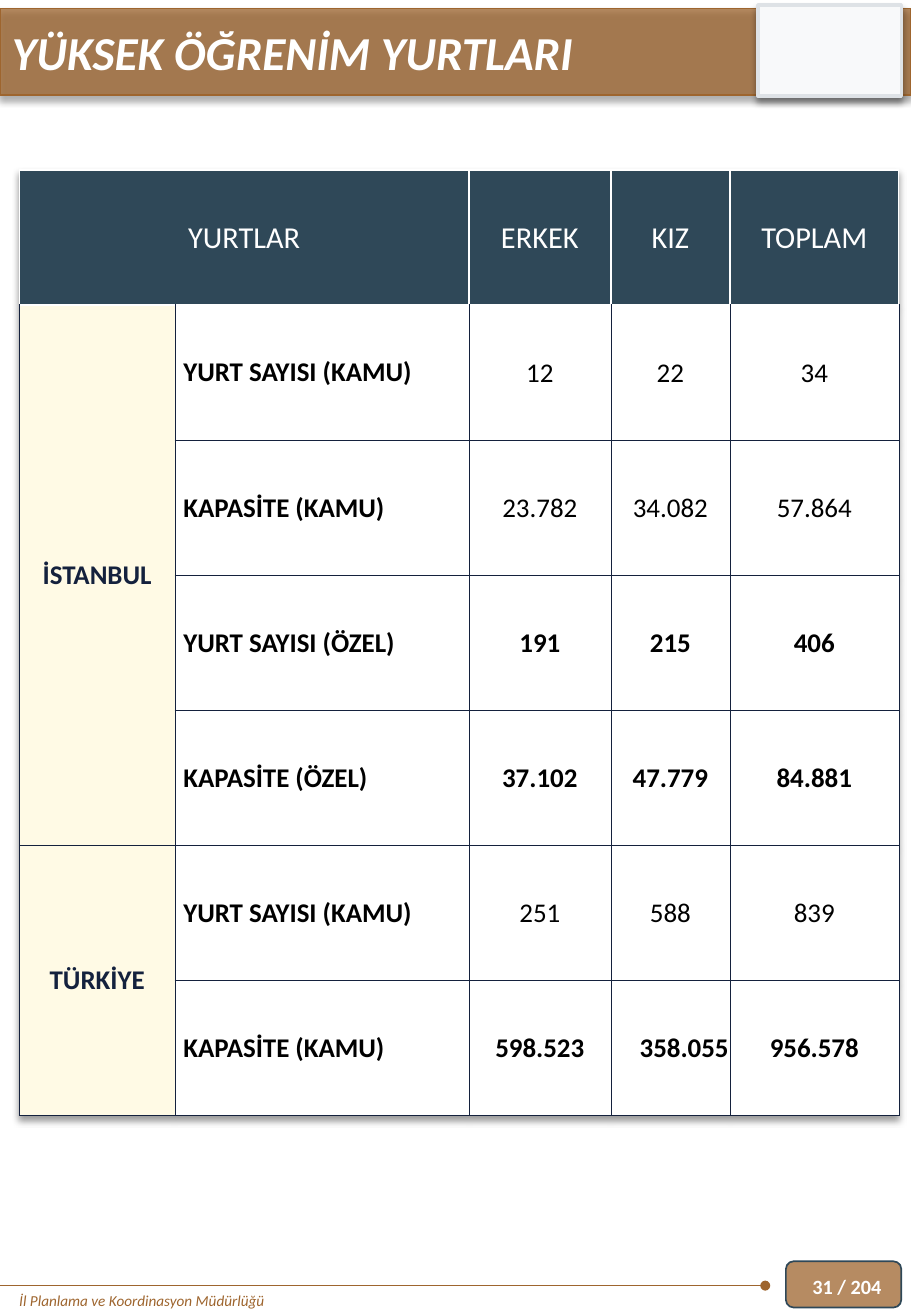
from lxml import etree
from pptx import Presentation
from pptx.dml.color import RGBColor
from pptx.enum.shapes import MSO_CONNECTOR, MSO_SHAPE
from pptx.enum.text import MSO_ANCHOR as ANCHOR, PP_ALIGN as ALIGN
from pptx.oxml import parse_xml
from pptx.oxml.ns import nsdecls, qn
from pptx.util import Inches, Pt

BROWN = RGBColor(0x9E, 0x65, 0x2E)
SLATE = RGBColor(0x2F, 0x48, 0x58)
NAVY = RGBColor(0x14, 0x21, 0x3D)
CREAM = RGBColor(0xFF, 0xFA, 0xE5)
WHITE = RGBColor(0xFF, 0xFF, 0xFF)
BLACK = RGBColor(0, 0, 0)
PANEL = RGBColor(0xF8, 0xF9, 0xFA)
PANEL_EDGE = RGBColor(0xDE, 0xE2, 0xE6)

COLS = [1.28, 2.42, 1.17, 0.98, 1.39]
HEADER = ["YURTLAR", "", "ERKEK", "KIZ", "TOPLAM"]
ROWS = [
    ("İSTANBUL", "YURT SAYISI (KAMU)", "12", "22", "34"),
    ("", "KAPASİTE (KAMU)", "23.782", "34.082", "57.864"),
    ("", "YURT SAYISI (ÖZEL)", "191", "215", "406"),
    ("", "KAPASİTE (ÖZEL)", "37.102", "47.779", "84.881"),
    ("TÜRKİYE", "YURT SAYISI (KAMU)", "251", "588", "839"),
    ("", "KAPASİTE (KAMU)", "598.523", "358.055", "956.578"),
]
BOLD_ROWS = {3, 4, 6}


def shadow_xml():
    """Return an effect list with a soft downward shadow."""
    return parse_xml(
        f'<a:effectLst {nsdecls("a")}><a:outerShdw blurRad="{Pt(4)}" dist="{Pt(3)}" '
        'dir="5400000" algn="t" rotWithShape="0"><a:srgbClr val="000000">'
        '<a:alpha val="40000"/></a:srgbClr></a:outerShdw></a:effectLst>')


def add_run(p, text, size, color, bold=False, italic=False):
    """Add one formatted run to a paragraph."""
    r = p.add_run()
    r.text = text
    font = r.font
    font.name, font.size = "Calibri", Pt(size)
    font.bold, font.italic = bold, italic
    font.color.rgb = color


def add_box(s, kind, box, fill, line, width, alpha=None, shadow=False):
    """Add a filled, outlined preset shape."""
    sp = s.shapes.add_shape(kind, *map(Inches, box))
    sp.fill.solid()
    sp.fill.fore_color.rgb = fill
    sp.line.color.rgb = line
    sp.line.width = Pt(width)
    sp.shadow.inherit = False
    sp_pr = sp._element.spPr
    if alpha:
        clr = sp_pr.find(qn("a:solidFill"))[0]
        etree.SubElement(clr, qn("a:alpha")).set("val", str(alpha * 1000))
    if shadow:
        sp_pr.replace(sp_pr.find(qn("a:effectLst")), shadow_xml())


def add_label(s, box, text, size, color, anchor=ANCHOR.TOP, **style):
    """Add a wrapping text box with one run."""
    tf = s.shapes.add_textbox(*map(Inches, box)).text_frame
    tf.word_wrap = True
    tf.vertical_anchor = anchor
    add_run(tf.paragraphs[0], text, size, color, **style)


def add_title_bar(s, left, top, width, height):
    """Draw the title band with its blank panel at the right."""
    add_box(s, MSO_SHAPE.RECTANGLE, (left, top, width, height),
            BROWN, BROWN, 1, alpha=75, shadow=True)
    add_box(s, MSO_SHAPE.RECTANGLE, (left + width - 1.26, top - 0.03, 1.18, 0.75),
            PANEL, PANEL_EDGE, 2, shadow=True)
    add_label(s, (left, top + 0.07, width, 0.57), "YÜKSEK ÖĞRENİM YURTLARI",
              28, WHITE, bold=True, italic=True)


def add_footer(s, left, top, width, height):
    """Draw the footer rule, the office name and the page badge."""
    badge = left + width - 1.03
    rule = top + 0.2
    add_box(s, MSO_SHAPE.ROUNDED_RECTANGLE, (badge, top, 0.95, height),
            BROWN, SLATE, 1, alpha=75)
    cx = s.shapes.add_connector(MSO_CONNECTOR.STRAIGHT, Inches(badge - 0.17), Inches(rule),
                                Inches(left), Inches(rule))
    cx.line.color.rgb = BROWN
    cx.line.width = Pt(0.5)
    etree.SubElement(cx.line._get_or_add_ln(), qn("a:headEnd")).set("type", "oval")
    etree.SubElement(cx._element.spPr, qn("a:effectLst"))
    add_label(s, (left + 0.06, rule, 4.69, 0.25), "İl Planlama ve Koordinasyon Müdürlüğü",
              9, BROWN, italic=True)
    add_label(s, (badge + 0.12, top, 1.15, 0.42), "31 / 204", 12, WHITE,
              anchor=ANCHOR.MIDDLE, bold=True)


def set_borders(cell, color, width, top=None):
    """Draw the four cell borders, with an optional different top."""
    tc_pr = cell._tc.get_or_add_tcPr()
    for side in "LRTB":
        rgb, pt = top if top and side == "T" else (color, width)
        tc_pr.append(parse_xml(
            f'<a:ln{side} {nsdecls("a")} w="{Pt(pt)}"><a:solidFill>'
            f'<a:srgbClr val="{rgb}"/></a:solidFill></a:ln{side}>'))


def style_cell(cell, row, col, text):
    """Fill, border and write one table cell by its position."""
    header, group, value = row == 0, col == 0, row > 0 and col > 1
    if header:
        set_borders(cell, WHITE, 1)
        fill, color, size, bold = SLATE, WHITE, 18, False
    else:
        set_borders(cell, NAVY, 0.25, top=(WHITE, 1) if row == 1 else None)
        fill, color = (CREAM, NAVY) if group else (WHITE, BLACK)
        size, bold = 16, not value or row in BOLD_ROWS
    cell.fill.solid()
    cell.fill.fore_color.rgb = fill
    cell.vertical_anchor = ANCHOR.MIDDLE
    side, top, bottom = (0.01, 0.01, 0) if value else (0.07, 0.04, 0.04)
    cell.margin_left = cell.margin_right = Inches(side)
    cell.margin_top, cell.margin_bottom = Inches(top), Inches(bottom)
    p = cell.text_frame.paragraphs[0]
    p.alignment = ALIGN.CENTER if header or col != 1 else ALIGN.LEFT
    if text == "358.055":
        p.alignment = ALIGN.RIGHT
    if text:
        add_run(p, text, size, color, bold)


def add_dorm_table(s, left, top, width, height):
    """Build the dormitory table with its merged group cells."""
    data = [HEADER, *ROWS]
    table = s.shapes.add_table(len(data), len(COLS),
                               *map(Inches, (left, top, width, height))).table
    table.first_row = table.horz_banding = False
    table._tbl.tblPr.insert(0, shadow_xml())
    for column, w in zip(table.columns, COLS):
        column.width = Inches(w)
    for i, texts in enumerate(data):
        table.rows[i].height = Inches(height / len(data))
        for j, text in enumerate(texts):
            style_cell(table.cell(i, j), i, j, text)
    for first, last in (((0, 0), (0, 1)), ((1, 0), (4, 0)), ((5, 0), (6, 0))):
        table.cell(*first).merge(table.cell(*last))


def main():
    """Build and save the slide."""
    prs = Presentation()
    prs.slide_width, prs.slide_height = Inches(7.5), Inches(10.83)
    s = prs.slides.add_slide(prs.slide_layouts[6])
    add_title_bar(s, 0, 0.07, 7.5, 0.71)
    add_dorm_table(s, 0.16, 1.4, 7.24, 7.78)
    add_footer(s, 0, 10.38, 7.5, 0.38)
    prs.save("out.pptx")


if __name__ == "__main__":
    main()
